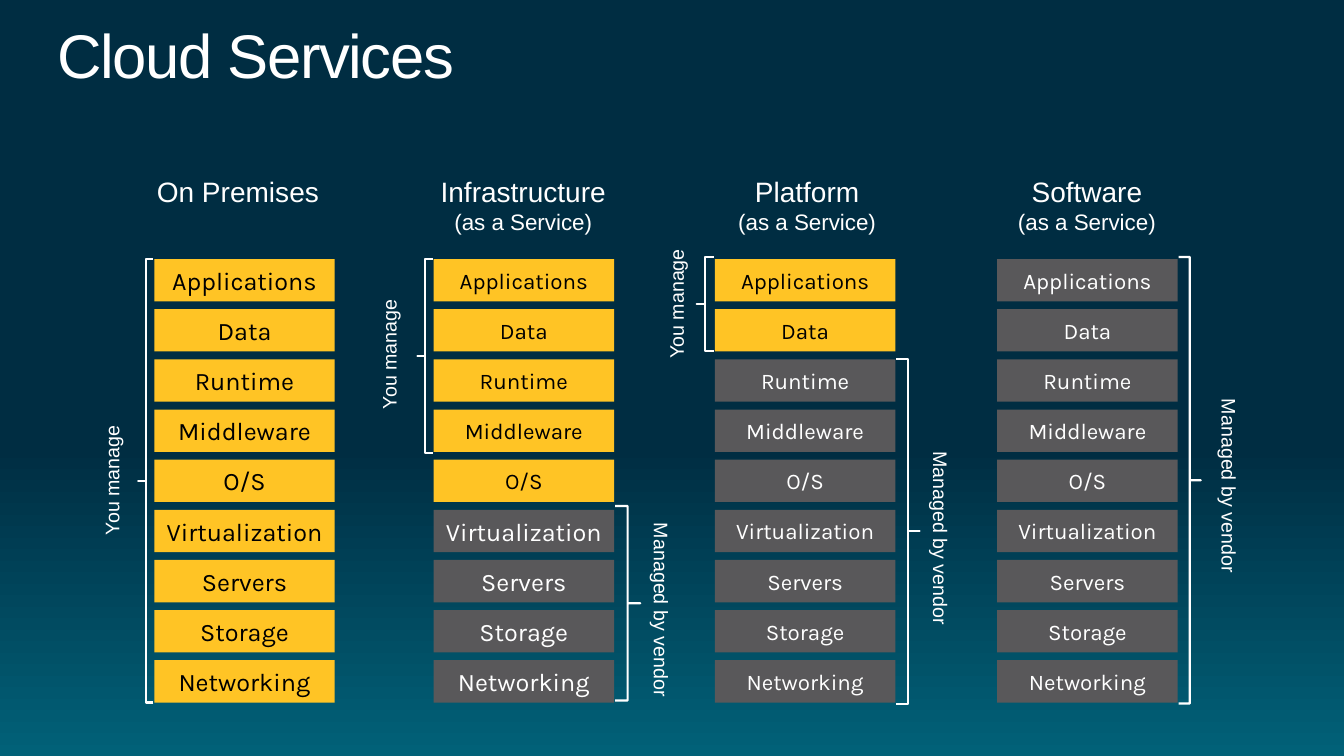
from copy import deepcopy

from pptx import Presentation
from pptx.dml.color import RGBColor
from pptx.enum import shapes, text
from pptx.oxml.ns import qn
from pptx.util import Inches, Pt

COLORS = {"navy": "002D42", "teal": "016178", "yellow": "FFC425",
          "gray": "59585A", "white": "FFFFFF", "black": "000000"}
LAYERS = ["Applications", "Data", "Runtime", "Middleware", "O/S",
          "Virtualization", "Servers", "Storage", "Networking"]
BAR_TOP, BAR_WIDTH, BAR_HEIGHT = 2.57, 1.79, 0.42
BAR_STEP = (6.55 - BAR_TOP) / (len(LAYERS) - 1)
LABEL_WIDTH = 0.44
# Per side: wording, text direction, brace shape, label height
SIDES = {
    "you": ("You manage", "vert270", shapes.MSO_SHAPE.LEFT_BRACE, 1.19),
    "vendor": ("Managed by vendor", "eaVert", shapes.MSO_SHAPE.RIGHT_BRACE, 1.83),
}
# Header box is (left, width); braces are (side, brace box, label left and top)
COLUMNS = [
    dict(name="On Premises", header=(1.34, 2.04), left=1.53, managed=9,
         sizes=(18, 18), service=False,
         braces=[("you", (1.37, 2.57, 0.15, 4.4), (0.94, 4.17))]),
    dict(name="Infrastructure", header=(3.77, 2.84), left=4.3, managed=5,
         sizes=(16, 18), service=True,
         braces=[("vendor", (6.1, 5.02, 0.25, 1.93), (6.29, 5.09)),
                 ("you", (4.14, 2.57, 0.15, 1.92), (3.69, 2.92))]),
    dict(name="Platform", header=(6.91, 2.19), left=7.09, managed=2,
         sizes=(16, 16), service=True,
         braces=[("vendor", (8.89, 3.56, 0.23, 3.42), (9.06, 4.38)),
                 ("you", (6.91, 2.55, 0.17, 0.93), (6.54, 2.42))]),
    dict(name="Software", header=(9.67, 2.22), left=9.89, managed=0,
         sizes=(16, 16), service=True,
         braces=[("vendor", (11.69, 2.55, 0.22, 4.43), (11.92, 3.86))]),
]


def color(name):
    return RGBColor.from_string(COLORS[name])


def add_span(para, wording, size, font="Arial", ink="white"):
    span = para.add_run()
    span.text = wording
    span.font.name = font
    span.font.size = Pt(size)
    span.font.color.rgb = color(ink)
    return span


def set_margins(frame, side, vertical):
    frame.margin_left = frame.margin_right = Inches(side)
    frame.margin_top = frame.margin_bottom = Inches(vertical)


def add_text_box(parent, box):
    frame = parent.shapes.add_textbox(*map(Inches, box)).text_frame
    frame.word_wrap = True
    set_margins(frame, 0, 0)
    return frame


def paint_background(page):
    """Keep the upper part navy, then fade to teal at the bottom."""
    fill = page.background.fill
    fill.gradient()
    fill.gradient_angle = 270
    first = next(page.element.iter(qn("a:gs")))
    first.addnext(deepcopy(first))
    stops = [(0, "navy"), (0.59, "navy"), (1, "teal")]
    for stop, (position, name) in zip(fill.gradient_stops, stops):
        stop.position = position
        stop.color.rgb = color(name)


def add_title(page, box):
    para = add_text_box(page, box).paragraphs[0]
    para.line_spacing = 0.9
    span = add_span(para, "Cloud Services", 44)
    span.font._element.set("spc", "-100")


def add_header(group, box, name, service):
    frame = add_text_box(group, box)
    para = frame.paragraphs[0]
    para.alignment = text.PP_ALIGN.CENTER
    add_span(para, name, 20)
    if service:
        para = frame.add_paragraph()
        para.alignment = text.PP_ALIGN.CENTER
        add_span(para, "(as a Service)", 16)


def add_bar(group, box, layer, size, fill, ink):
    bar = group.shapes.add_shape(shapes.MSO_SHAPE.RECTANGLE, *map(Inches, box))
    bar.shadow.inherit = False
    bar.fill.solid()
    bar.fill.fore_color.rgb = color(fill)
    bar.line.fill.background()
    frame = bar.text_frame
    set_margins(frame, 0, 0.05)
    frame.vertical_anchor = text.MSO_ANCHOR.MIDDLE
    para = frame.paragraphs[0]
    para.alignment = text.PP_ALIGN.CENTER
    add_span(para, layer, size, "Karla", ink)


def add_brace(group, side, box, label_at):
    """Draw a square brace and the rotated label beside it."""
    wording, direction, outline, label_height = SIDES[side]
    brace = group.shapes.add_shape(outline, *map(Inches, box))
    brace.shadow.inherit = False
    brace.adjustments[0] = 0
    brace.adjustments[1] = 0.5
    brace.fill.background()
    brace.line.color.rgb = color("white")
    brace.line.width = Pt(1.5)

    frame = add_text_box(group, (*label_at, LABEL_WIDTH, label_height))
    frame.word_wrap = False
    set_margins(frame, 0.1, 0.05)
    frame._txBody.bodyPr.set("vert", direction)
    para = frame.paragraphs[0]
    para.alignment = text.PP_ALIGN.CENTER
    add_span(para, wording, 14)


def add_column(page, column):
    group = page.shapes.add_group_shape()
    left, width = column["header"]
    add_header(group, (left, 1.73, width, 0.7), column["name"], column["service"])
    own_size, vendor_size = column["sizes"]
    for row, layer in enumerate(LAYERS):
        box = (column["left"], BAR_TOP + row * BAR_STEP, BAR_WIDTH, BAR_HEIGHT)
        if row < column["managed"]:
            add_bar(group, box, layer, own_size, "yellow", "black")
        else:
            add_bar(group, box, layer, vendor_size, "gray", "white")
    for brace in column["braces"]:
        add_brace(group, *brace)


def main():
    deck = Presentation()
    deck.slide_width, deck.slide_height = Inches(13.33), Inches(7.5)
    page = deck.slides.add_slide(deck.slide_layouts[6])
    paint_background(page)
    add_title(page, (0.57, 0.25, 12.19, 0.67))
    for column in COLUMNS:
        add_column(page, column)
    deck.save("out.pptx")


if __name__ == "__main__":
    main()
